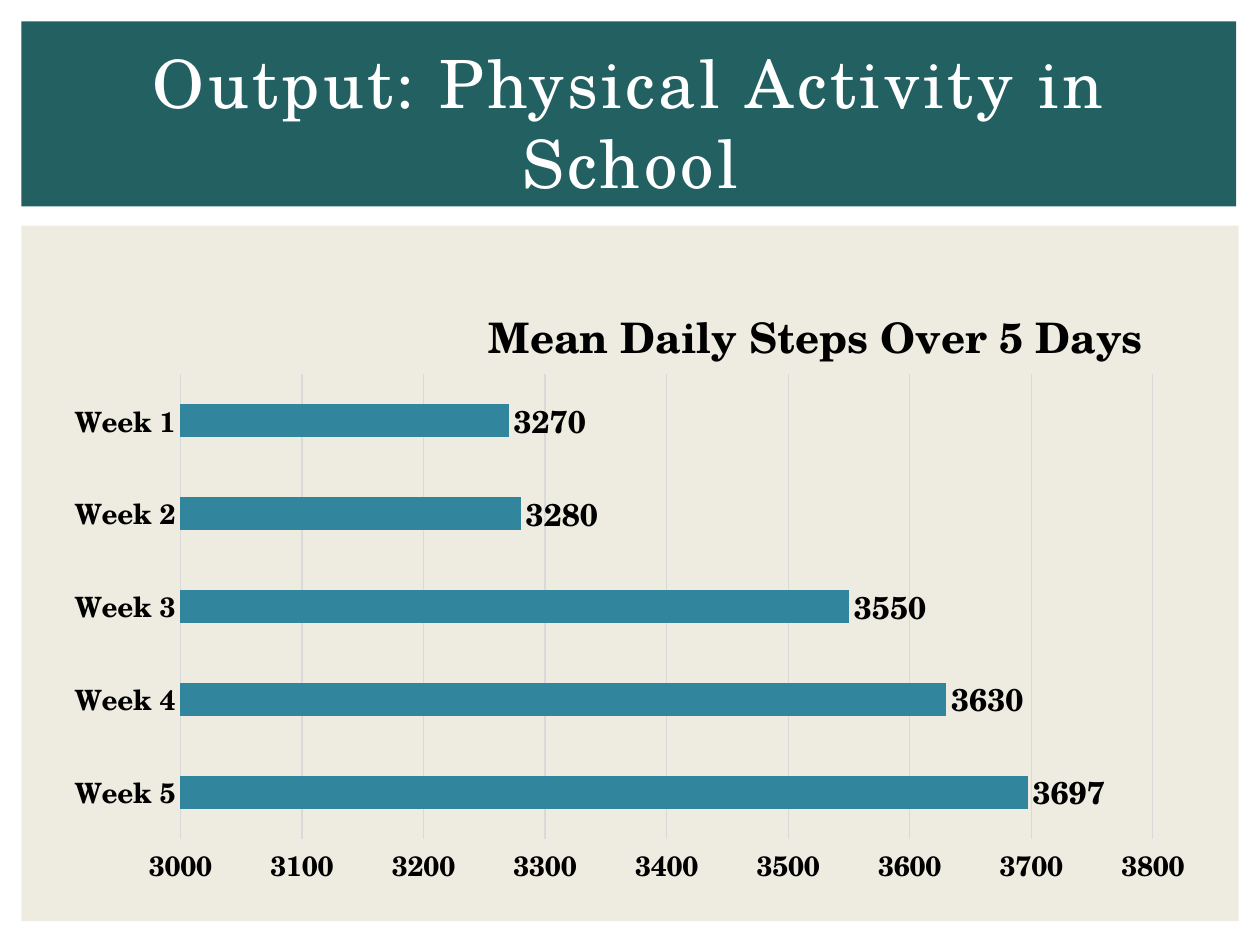
from lxml import etree
from pptx import Presentation
from pptx.chart.data import CategoryChartData
from pptx.dml.color import RGBColor
from pptx.enum.chart import XL_CHART_TYPE, XL_LABEL_POSITION, XL_TICK_MARK
from pptx.enum.shapes import MSO_SHAPE
from pptx.enum.text import MSO_ANCHOR, PP_ALIGN
from pptx.oxml.ns import qn
from pptx.util import Cm, Pt

COLORS = {
    "banner": "236062",
    "panel": "EEECE1",
    "bar": "31859C",
    "grid": "D9D9D9",
    "text": "000000",
    "title": "FFFFFF",
}
FONT = "TeX Gyre Schola"


def style_font(font, size, color, bold):
    font.name = FONT
    font.size = Pt(size)
    font.bold = bold
    font.color.rgb = RGBColor.from_string(COLORS[color])


def set_manual_layout(element, index, settings):
    """Place a chart part by fractions of the chart; index is the layout's child position."""
    for old_layout in element.findall(qn("c:layout")):
        element.remove(old_layout)
    layout = etree.Element(qn("c:layout"))
    manual = etree.SubElement(layout, qn("c:manualLayout"))
    for name, value in settings.items():
        etree.SubElement(manual, qn(f"c:{name}")).set("val", str(value))
    element.insert(index, layout)


presentation = Presentation()
presentation.slide_width = Cm(25.4)
presentation.slide_height = Cm(19.05)
slide = presentation.slides.add_slide(presentation.slide_layouts[6])

# Background panel and title banner
for color, left, top, width, height in (
    ("panel", 0.43, 4.55, 24.54, 14.02),
    ("banner", 0.43, 0.43, 24.49, 3.73),
):
    shape = slide.shapes.add_shape(
        MSO_SHAPE.RECTANGLE, Cm(left), Cm(top), Cm(width), Cm(height)
    )
    shape.shadow.inherit = False
    shape.fill.solid()
    shape.fill.fore_color.rgb = RGBColor.from_string(COLORS[color])
    shape.line.fill.background()

# Slide title
title_box = slide.shapes.add_textbox(Cm(1.07), Cm(0.99), Cm(23.29), Cm(2.92))
text_frame = title_box.text_frame
text_frame.word_wrap = True
text_frame.vertical_anchor = MSO_ANCHOR.MIDDLE
text_frame.text = "Output: Physical Activity in School"
paragraph = text_frame.paragraphs[0]
paragraph.alignment = PP_ALIGN.CENTER
title_font = paragraph.runs[0].font
style_font(title_font, 38, "title", False)
paragraph.runs[0]._r.get_or_add_rPr().set("spc", "200")

# Bar chart: categories run from the bottom up
chart_data = CategoryChartData()
chart_data.categories = [f"Week {week}" for week in range(5, 0, -1)]
chart_data.add_series("Series 1", (3697, 3630, 3550, 3280, 3270))
chart = slide.shapes.add_chart(
    XL_CHART_TYPE.BAR_CLUSTERED, Cm(1.07), Cm(5.08), Cm(23.34), Cm(13), chart_data
).chart
style_font(chart.font, 10, "text", False)
chart.has_legend = False

chart.has_title = True
chart_title = chart.chart_title
chart_title.text_frame.text = "Mean Daily Steps Over 5 Days"
style_font(chart_title.text_frame.paragraphs[0].runs[0].font, 24, "text", True)
set_manual_layout(
    chart_title._element, 1, {"xMode": "edge", "yMode": "edge", "x": 0.37, "y": 0.06}
)

plot = chart.plots[0]
plot.gap_width = 182
plot.vary_by_categories = False
set_manual_layout(
    plot._element.getparent(),
    0,
    {
        "layoutTarget": "inner",
        "xMode": "edge",
        "yMode": "edge",
        "x": 0.11,
        "y": 0.19,
        "w": 0.84,
        "h": 0.72,
    },
)

series = plot.series[0]
series.format.fill.solid()
series.format.fill.fore_color.rgb = RGBColor.from_string(COLORS["bar"])
labels = series.data_labels
labels.show_value = True
labels.position = XL_LABEL_POSITION.OUTSIDE_END
style_font(labels.font, 18, "text", True)

category_axis, value_axis = chart.category_axis, chart.value_axis
for axis in (category_axis, value_axis):
    axis.major_tick_mark = XL_TICK_MARK.NONE
    axis.minor_tick_mark = XL_TICK_MARK.NONE
    style_font(axis.tick_labels.font, 16, "text", True)

value_axis.minimum_scale = 3000
value_axis.maximum_scale = 3800
value_axis.major_unit = 100
value_axis.has_major_gridlines = True
value_axis.format.line.fill.background()
for line in (category_axis.format.line, value_axis.major_gridlines.format.line):
    line.color.rgb = RGBColor.from_string(COLORS["grid"])
    line.width = Pt(0.75)

presentation.save("out.pptx")
